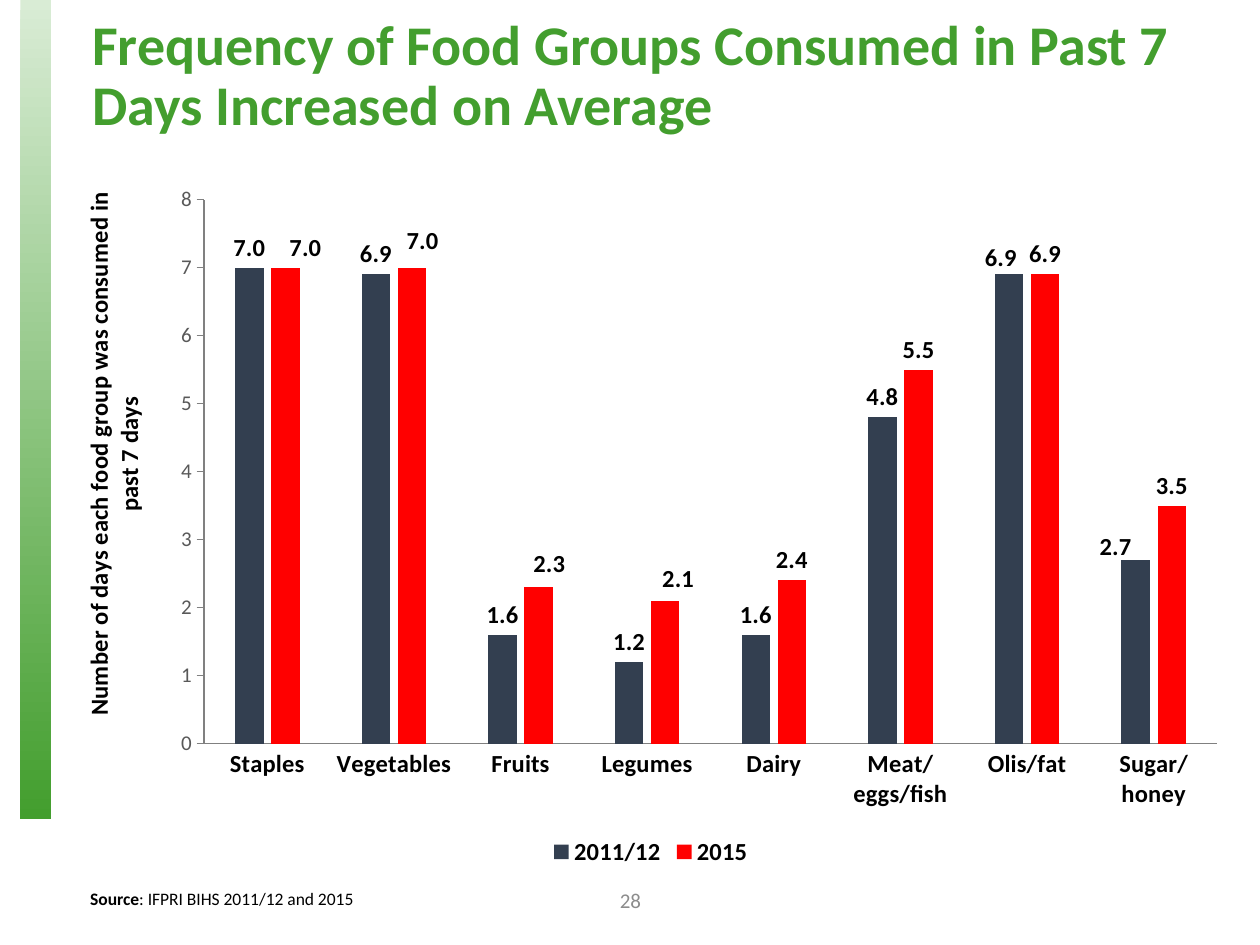
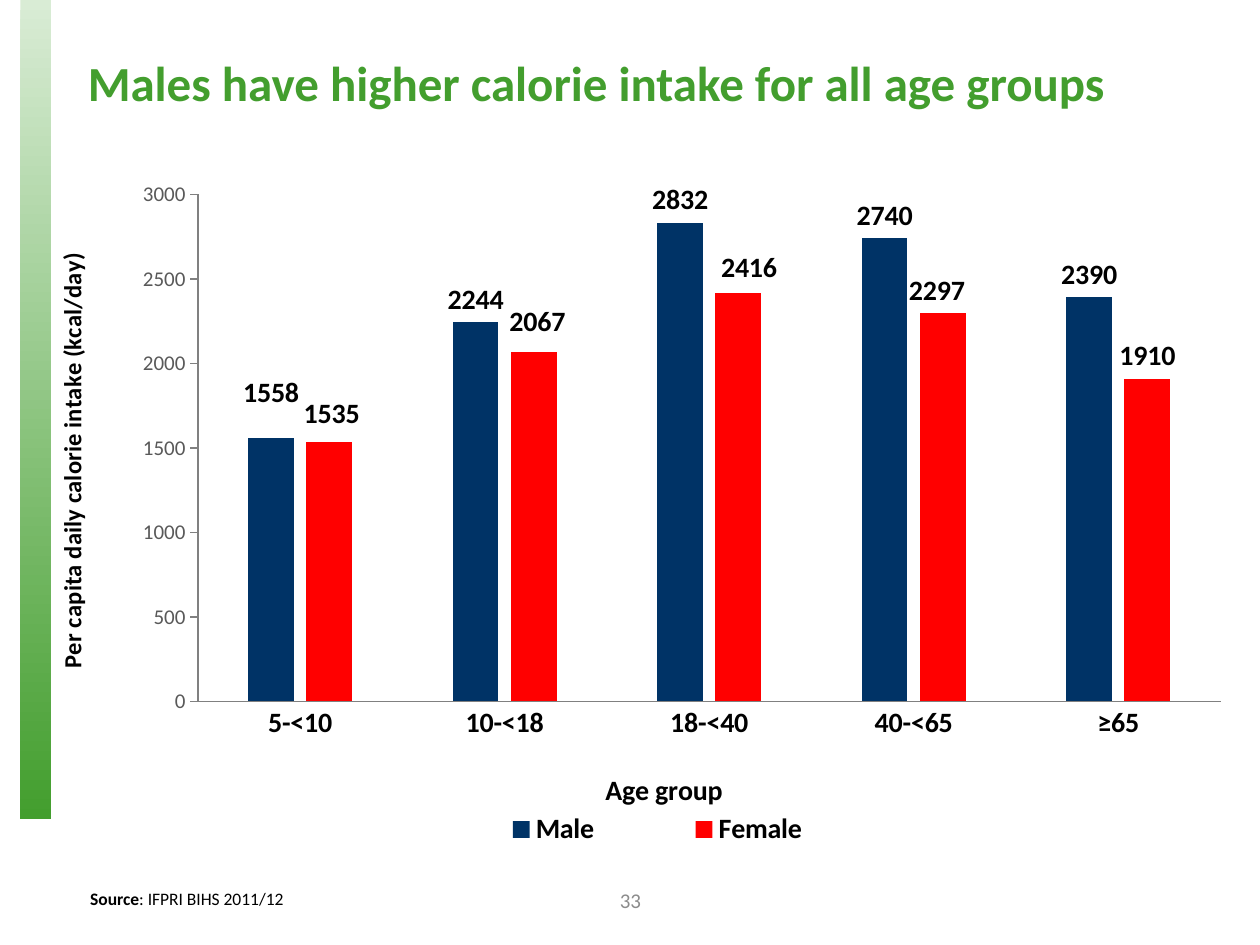
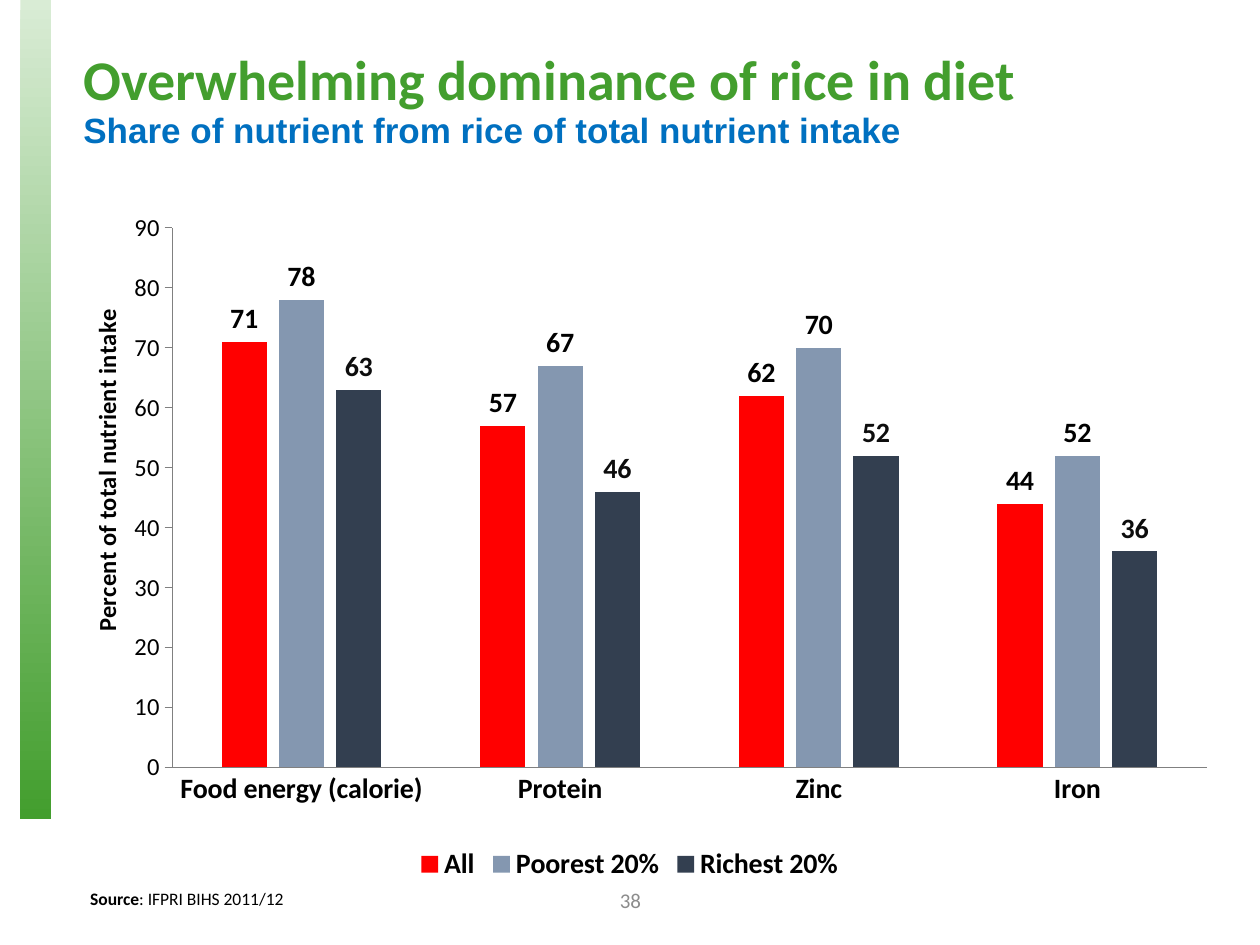
from copy import deepcopy
from dataclasses import dataclass, field
from typing import Any

from pptx import Presentation
from pptx.chart.data import CategoryChartData
from pptx.dml.color import RGBColor
from pptx.enum.chart import XL_CHART_TYPE, XL_LABEL_POSITION, XL_LEGEND_POSITION, XL_TICK_MARK
from pptx.enum.shapes import MSO_SHAPE
from pptx.enum.text import MSO_ANCHOR, PP_ALIGN
from pptx.oxml import parse_xml
from pptx.oxml.ns import nsdecls, qn
from pptx.util import Cm, Pt

COLUMNS = XL_CHART_TYPE.COLUMN_CLUSTERED
ABOVE = XL_LABEL_POSITION.OUTSIDE_END
BOTTOM = XL_LEGEND_POSITION.BOTTOM
NO_TICK, OUT_TICK = XL_TICK_MARK.NONE, XL_TICK_MARK.OUTSIDE
BOX = MSO_SHAPE.RECTANGLE
TOP, MIDDLE = MSO_ANCHOR.TOP, MSO_ANCHOR.MIDDLE
LEFT, CENTER = PP_ALIGN.LEFT, PP_ALIGN.CENTER

GREEN, PALE, BLUE = "439E2E", "D9ECD5", "0070C0"
BLACK, INK, GRAY = "000000", "0D0D0D", "595959"
FAINT, LINE = "8C8C8C", "808080"
SLATE, NAVY, STEEL, RED = "333F50", "003366", "8497B0", "FF0000"
BODY = "Calibri"
SOURCE_AT = (1.57, 17.78, 18.47, 0.69)
NUMBER_AT = (9.85, 17.64, 5.72, 1.02)
BAND_AT = (0.41, 0, 0.62, 16.51)

Place = tuple[float, ...]


@dataclass
class Run:
    """A piece of text in one style."""
    text: str
    size: float
    color: str = BLACK
    bold: bool = True
    font: str = BODY


@dataclass
class Series:
    """One set of columns, with label shifts in percent of the chart."""
    name: str
    values: tuple[float, ...]
    color: str
    shifts: dict[int, Place] = field(default_factory=dict)
    ink: str = BLACK


@dataclass
class Graph:
    """A column chart; inner places are in percent of the chart."""
    at: Place
    plot: Place
    groups: tuple[str, ...]
    series: list[Series]
    top: float
    step: float
    format: str
    title: str
    title_at: Place
    axis_size: int = 12
    axis_color: str = GRAY
    size: int = 16
    base: str = ""
    base_at: Place = ()
    legend_at: Place = ()


@dataclass
class Page:
    """The content of one slide."""
    title: list[Run]
    title_at: Place
    graph: Graph
    source: str
    number: str
    spacing: float = 0.9


def color(code: str) -> RGBColor:
    """Turn a hex string into a colour."""
    return RGBColor.from_string(code)


def apply(item: Any, values: dict[str, Any]) -> None:
    """Set each named value on an item."""
    for name, value in values.items():
        setattr(item, name, value)


def style(font: Any, size: float, code: str = BLACK, bold: bool = True, name: str = BODY) -> None:
    """Format a font."""
    apply(font, {"size": Pt(size), "bold": bold, "name": name})
    font.color.rgb = color(code)


def add_text(slide: Any, at: Place, lines: list[list[Run]], anchor: Any = MIDDLE,
             align: Any = LEFT, spacing: float = 1.0) -> None:
    """Add a text box with one paragraph for each line."""
    frame = slide.shapes.add_textbox(*map(Cm, at)).text_frame
    apply(frame, {"word_wrap": True, "vertical_anchor": anchor})
    for index, line in enumerate(lines):
        para = frame.add_paragraph() if index else frame.paragraphs[0]
        apply(para, {"alignment": align, "line_spacing": spacing})
        for part in line:
            run = para.add_run()
            run.text = part.text
            style(run.font, part.size, part.color, part.bold, part.font)


def add_band(slide: Any) -> None:
    """Add the fading band on the left."""
    band = slide.shapes.add_shape(BOX, *map(Cm, BAND_AT))
    band.shadow.inherit = False
    band.line.fill.background()
    band.fill.gradient()
    band.fill.gradient_angle = 270
    for stop, code in zip(band.fill.gradient_stops, (PALE, GREEN)):
        stop.color.rgb = color(code)


def set_place(parent: Any, index: int, at: Place, edge: bool = True, inner: bool = False) -> None:
    """Give a chart part a manual layout."""
    for old in parent.findall(qn("c:layout")):
        parent.remove(old)
    keys = ("x", "y", "w", "h")[:len(at)]
    target = '<c:layoutTarget val="inner"/>' if inner else ""
    modes = '<c:xMode val="edge"/><c:yMode val="edge"/>' if edge else ""
    sizes = "".join(f'<c:{key} val="{part / 100:.4f}"/>' for key, part in zip(keys, at))
    parent.insert(index, parse_xml(
        f'<c:layout {nsdecls("c")}><c:manualLayout>{target}{modes}{sizes}'
        "</c:manualLayout></c:layout>"))


def add_labels(series: Any, data: Series, graph: Graph) -> None:
    """Label the columns without leader lines and shift the labels that need it."""
    labels = series.data_labels
    apply(labels, {"show_value": True, "number_format": graph.format,
                   "number_format_is_linked": False, "position": ABOVE})
    style(labels.font, graph.size, data.ink)
    root = labels._element
    for old in root.findall(qn("c:showLeaderLines")):
        root.remove(old)
    parts = list(root)
    root.append(parse_xml(f'<c:showLeaderLines {nsdecls("c")} val="0"/>'))
    for spot, (index, shift) in enumerate(data.shifts.items()):
        label = parse_xml(f'<c:dLbl {nsdecls("c")}><c:idx val="{index}"/></c:dLbl>')
        set_place(label, 1, shift, edge=False)
        label.extend(deepcopy(part) for part in parts)
        root.insert(spot, label)


def name_axis(axis: Any, text: str, at: Place, size: int, turn: int = 0) -> None:
    """Give an axis a title at a fixed place."""
    frame = axis.axis_title.text_frame
    frame.text = text
    style(frame.paragraphs[0].runs[0].font, size)
    frame._txBody.bodyPr.set("rot", str(turn * 60000))
    frame._txBody.bodyPr.set("vert", "horz")
    set_place(axis.axis_title._element, 1, at)


def add_graph(slide: Any, graph: Graph) -> None:
    """Add a column chart."""
    data = CategoryChartData()
    data.categories = graph.groups
    for item in graph.series:
        data.add_series(item.name, item.values)
    chart = slide.shapes.add_chart(COLUMNS, *map(Cm, graph.at), data).chart
    apply(chart, {"has_title": False, "has_legend": True})
    style(chart.font, 10, bold=False)
    plot = chart.plots[0]
    apply(plot, {"gap_width": 219, "overlap": -27, "vary_by_categories": False})
    set_place(chart._chartSpace.chart.plotArea, 0, graph.plot, inner=True)
    for series, item in zip(plot.series, graph.series):
        series.format.fill.solid()
        series.format.fill.fore_color.rgb = color(item.color)
        add_labels(series, item, graph)

    apply(chart.legend, {"position": BOTTOM, "include_in_layout": False})
    style(chart.legend.font, graph.size)
    if graph.legend_at:
        set_place(chart.legend._element, 1, graph.legend_at)

    base, scale = chart.category_axis, chart.value_axis
    for axis, tick in ((base, NO_TICK), (scale, OUT_TICK)):
        apply(axis, {"has_major_gridlines": False, "major_tick_mark": tick,
                     "minor_tick_mark": NO_TICK})
        axis.format.line.width = Pt(0.75)
        axis.format.line.color.rgb = color(LINE)
    apply(scale, {"minimum_scale": 0, "maximum_scale": graph.top, "major_unit": graph.step})
    apply(scale.tick_labels, {"number_format": "0", "number_format_is_linked": False})
    style(base.tick_labels.font, graph.size)
    style(scale.tick_labels.font, graph.axis_size, graph.axis_color, False)
    name_axis(scale, graph.title, graph.title_at, 14, -90)
    if graph.base:
        name_axis(base, graph.base, graph.base_at, 16)


def add_page(deck: Any, page: Page) -> None:
    """Add a slide with band, title, chart and footer."""
    slide = deck.slides.add_slide(deck.slide_layouts[6])
    add_band(slide)
    add_text(slide, page.title_at, [[run] for run in page.title], spacing=page.spacing)
    add_graph(slide, page.graph)
    add_text(slide, SOURCE_AT, [[Run("Source", 10), Run(f": {page.source}", 10, bold=False)]], TOP)
    add_text(slide, NUMBER_AT, [[Run(page.number, 12, FAINT, False)]], align=CENTER)


FOODS = Graph(
    at=(1.22, 3.48, 23.8, 14.1), plot=(12.16, 3.85, 85.8, 77.8),
    groups=("Staples", "Vegetables", "Fruits", "Legumes", "Dairy", "Meat/eggs/fish",
            "Olis/fat", "Sugar/honey"),
    series=[
        Series("2011/12", (7, 6.9, 1.6, 1.2, 1.6, 4.8, 6.9, 2.7), SLATE,
               {6: (-0.7, 0.5), 7: (-1.7, 1)}),
        Series("2015", (7, 7, 2.3, 2.1, 2.4, 5.5, 6.9, 3.5), RED,
               {0: (1.7, 0), 1: (0.9, -0.9), 2: (0.9, -0.4), 3: (1.1, -0.3)}),
    ],
    top=8, step=1, format="0.0", size=14,
    title="Number of days each food group was consumed in past 7 days", title_at=(1.4, 2.2))

AGES = Graph(
    at=(0.99, 3.48, 24, 15.19), plot=(12.5, 2.9, 85.9, 67.3),
    groups=("5-<10", "10-<18", "18-<40", "40-<65", "≥65"),
    series=[
        Series("Male", (1558, 2244, 2832, 2740, 2390), NAVY, {0: (0, -3)}),
        Series("Female", (1535, 2067, 2416, 2297, 1910), RED,
               {0: (0.2, -0.8), 1: (0.3, -1), 2: (0.9, -0.4), 3: (-0.5, 0)}),
    ],
    top=3000, step=500, format="0",
    title="Per capita daily calorie intake (kcal/day)", title_at=(0.1, 10.1),
    base="Age group", base_at=(46.3, 78.8), legend_at=(31.2, 84.2, 39.8, 6))

RICE = Graph(
    at=(0.84, 4.11, 23.7, 13.77), plot=(11.1, 3.5, 88, 79),
    groups=("Food energy (calorie)", "Protein", "Zinc", "Iron"),
    series=[
        Series("All", (71, 57, 62, 44), RED),
        Series("Poorest 20%", (78, 67, 70, 52), STEEL),
        Series("Richest 20%", (63, 46, 52, 36), SLATE, ink=INK),
    ],
    top=90, step=10, format="0", axis_size=14, axis_color=BLACK,
    title="Percent of total nutrient intake", title_at=(3.7, 14.8))

PAGES = [
    Page([Run("Frequency of Food Groups Consumed in Past 7 Days Increased on Average", 32, GREEN)],
         (1.61, 0.43, 22.86, 2.26), FOODS, "IFPRI BIHS 2011/12 and 2015", "28"),
    Page([Run("Males have higher calorie intake for all age groups", 28, GREEN)],
         (1.52, 0.65, 23.47, 2.01), AGES, "IFPRI BIHS 2011/12", "33", 1.0),
    Page([Run("Overwhelming dominance of rice in diet", 32, GREEN),
          Run("Share of nutrient from rice of total nutrient intake", 20, BLUE, font="Arial")],
         (1.43, 0.76, 23.44, 2.57), RICE, "IFPRI BIHS 2011/12", "38"),
]


def main() -> None:
    """Build and save the slides."""
    deck = Presentation()
    apply(deck, {"slide_width": Cm(25.4), "slide_height": Cm(19.05)})
    for page in PAGES:
        add_page(deck, page)
    deck.save("out.pptx")


if __name__ == "__main__":
    main()
